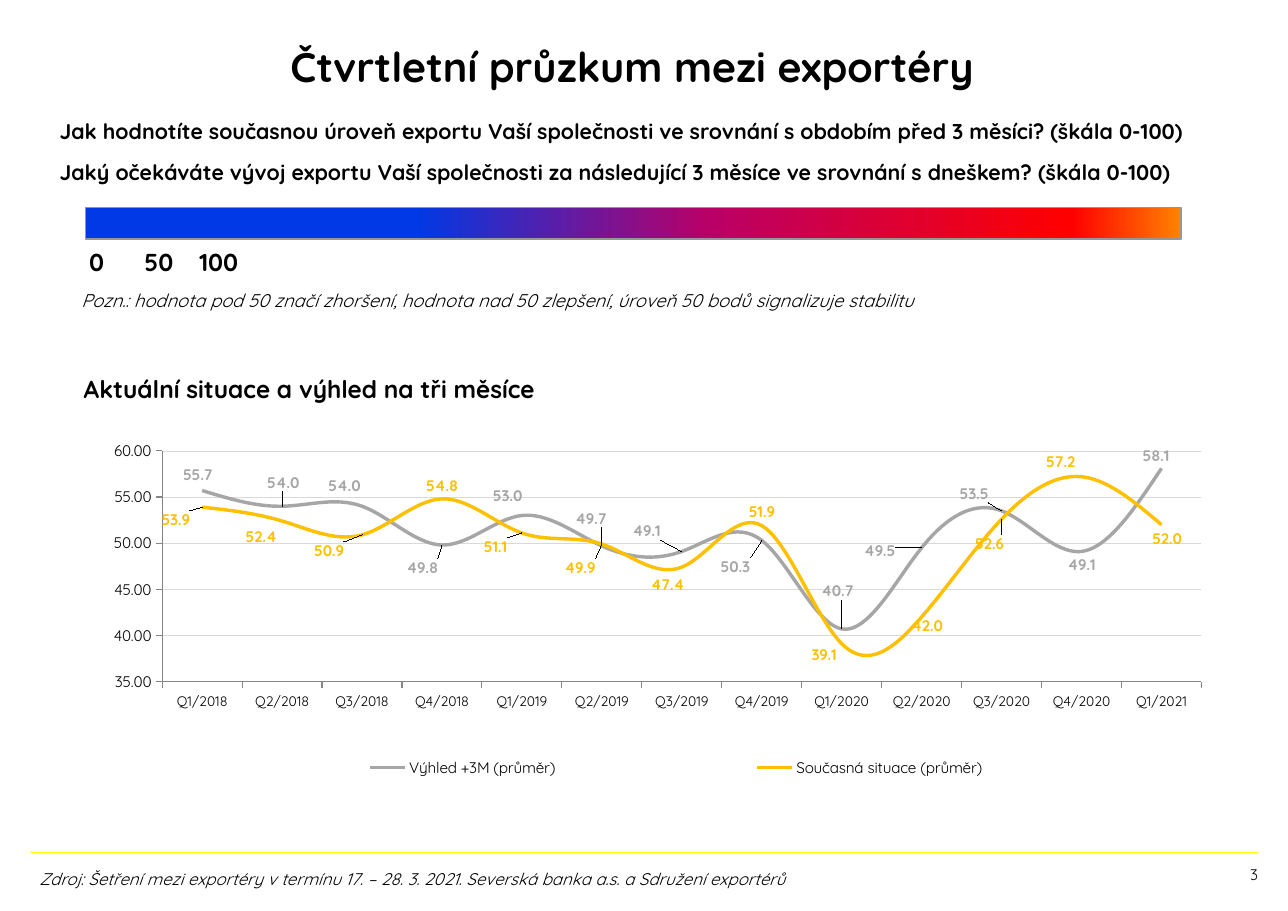
from lxml.etree import SubElement
from pptx import Presentation
from pptx.chart.data import CategoryChartData
from pptx.dml.color import RGBColor
from pptx.enum.chart import XL_CHART_TYPE, XL_LABEL_POSITION, XL_LEGEND_POSITION, XL_MARKER_STYLE, XL_TICK_MARK
from pptx.enum.shapes import MSO_CONNECTOR, MSO_SHAPE
from pptx.enum.text import MSO_ANCHOR, MSO_AUTO_SIZE, PP_ALIGN
from pptx.oxml.ns import qn
from pptx.util import Pt

EMU_PER_PX = 9144
CHART_WIDTH, CHART_HEIGHT = 1004, 355
INSETS = (12, 16, 12, 0)

QUARTERS = [f"Q{quarter}/{year}" for year in (2018, 2019, 2020) for quarter in (1, 2, 3, 4)] + ["Q1/2021"]
# Label shifts are (right, down) in px from the usual place, by point number.
SERIES = [
    dict(name="Výhled +3M (průměr)", color="A6A6A6", place=XL_LABEL_POSITION.BELOW,
         values=(55.7, 54, 54, 49.8, 53, 49.7, 49.1, 50.3, 40.7, 49.5, 53.5, 49.1, 58.1),
         shifts={0: (-4, -27), 1: (1, -34), 2: (-16, -31), 3: (-18, 8), 4: (-13, -30), 5: (-10, -37),
                 6: (-32, -31), 7: (-24, 12), 8: (-4, -47), 9: (-38, -10), 10: (-25, -28), 12: (-5, -24)}),
    dict(name="Současná situace (průměr)", color="FFC000", place=XL_LABEL_POSITION.ABOVE,
         values=(53.9, 52.4, 50.9, 54.8, 51.1, 49.9, 47.4, 51.9, 39.1, 42, 52.6, 57.2, 52),
         shifts={0: (-24, 24), 1: (-19, 27), 2: (-30, 27), 4: (-24, 25), 5: (-20, 34), 6: (-13, 28),
                 8: (-16, 22), 9: (5, 20), 10: (-11, 35), 11: (-19, -1), 12: (5, 25)}),
]


def px(length):
    return length * EMU_PER_PX


def rgb(color):
    return RGBColor.from_string(color)


def add_layout(parent, index, **settings):
    """Insert a manual chart layout as the child of parent at index."""
    layout = parent.makeelement(qn("c:layout"))
    manual = SubElement(layout, qn("c:manualLayout"))
    for name, value in settings.items():
        SubElement(manual, qn(f"c:{name}"), val=str(value))
    parent.insert(index, layout)


class SlideBuilder:
    font_name = "Quicksand"
    text_color = "000000"

    def __init__(self, page):
        self.page = page

    def style_font(self, font, size, color=None, bold=False, italic=False):
        font.name, font.size, font.bold, font.italic = self.font_name, Pt(size), bold, italic
        font.color.rgb = rgb(color or self.text_color)

    def fill_text(self, box, at, lines, size, insets=(10, 5, 10, 5), align=PP_ALIGN.LEFT,
                  anchor=MSO_ANCHOR.TOP, tabs=(), **style):
        box.left, box.top, box.width, box.height = map(px, at)
        frame = box.text_frame
        frame.auto_size, frame.word_wrap, frame.vertical_anchor = MSO_AUTO_SIZE.NONE, True, anchor
        frame.margin_left, frame.margin_top, frame.margin_right, frame.margin_bottom = map(px, insets)
        for number, line in enumerate(lines):
            para = frame.add_paragraph() if number else frame.paragraphs[0]
            para.alignment, para.space_before = align, Pt(10 if number else 0)
            properties = para._p.get_or_add_pPr()
            properties.set("marL", "0")
            properties.set("indent", "0")
            SubElement(properties, qn("a:buNone"))
            if tabs:
                stops = SubElement(properties, qn("a:tabLst"))
                for position, kind in tabs:
                    SubElement(stops, qn("a:tab"), pos=str(px(position)), algn=kind)
            span = para.add_run()
            span.text = line
            self.style_font(span.font, size, **style)

    def text(self, at, line, size, **style):
        box = self.page.shapes.add_textbox(*map(px, at))
        self.fill_text(box, at, [line], size, **style)

    def gradient_bar(self, at, stops, line_color):
        bar = self.page.shapes.add_shape(MSO_SHAPE.RECTANGLE, *map(px, at))
        bar.shadow.inherit = False
        bar.fill.gradient()
        bar.fill.gradient_angle = 0
        stop_list = bar._element.spPr.find(".//" + qn("a:gsLst"))
        for old_stop in list(stop_list):
            stop_list.remove(old_stop)
        for percent, color in stops:
            stop = SubElement(stop_list, qn("a:gs"), pos=str(percent * 1000))
            SubElement(stop, qn("a:srgbClr"), val=color)
        bar.line.color.rgb, bar.line.width = rgb(line_color), Pt(0.75)

    def rule(self, left, right, top, color):
        rule = self.page.shapes.add_connector(MSO_CONNECTOR.STRAIGHT, px(left), px(top), px(right), px(top))
        rule.line.color.rgb, rule.line.width = rgb(color), Pt(1)
        SubElement(rule._element.spPr, qn("a:effectLst"))

    def line_chart(self, at):
        data = CategoryChartData()
        data.categories = QUARTERS
        for entry in SERIES:
            data.add_series(entry["name"], entry["values"])
        chart = self.page.shapes.add_chart(XL_CHART_TYPE.LINE, *map(px, at), data).chart
        chart.has_title = False
        self.style_font(chart.font, 10)
        plot = chart.plots[0]
        plot.vary_by_categories = False
        for series, entry in zip(plot.series, SERIES):
            self.style_series(series, entry)
        self.style_axes(chart)
        chart.has_legend = True
        legend = chart.legend
        legend.position, legend.include_in_layout = XL_LEGEND_POSITION.BOTTOM, False
        self.style_font(legend.font, 10)
        for old_layout in legend._element.findall(qn("c:layout")):
            legend._element.remove(old_layout)
        add_layout(legend._element, 1, xMode="edge", yMode="edge", x=0.07, y=0.85, w=0.91, h=0.08)
        plot_area = plot._element.getparent()
        for old_layout in plot_area.findall(qn("c:layout")):
            plot_area.remove(old_layout)
        add_layout(plot_area, 0, layoutTarget="inner", xMode="edge", yMode="edge", x=0.06, y=0.08, w=0.94, h=0.59)

    def style_series(self, series, entry):
        color = entry["color"]
        series.smooth = True
        series.marker.style = XL_MARKER_STYLE.NONE
        series.format.line.color.rgb, series.format.line.width = rgb(color), Pt(2.25)
        labels = series.data_labels
        labels.show_value, labels.position = True, entry["place"]
        labels.number_format, labels.number_format_is_linked = "#,##0.0", False
        self.style_font(labels.font, 10, color, bold=True)
        for number in entry["shifts"]:
            label = series.points[number].data_label
            self.style_font(label.font, 10, color, bold=True)
            label.position = entry["place"]
        point_labels = labels._element.findall(qn("c:dLbl"))
        for element, (right, down) in zip(point_labels, entry["shifts"].values()):
            add_layout(element, 1, x=right / CHART_WIDTH, y=down / CHART_HEIGHT)
            number_format = element.makeelement(qn("c:numFmt"), formatCode="#,##0.0", sourceLinked="0")
            element.insert(2, number_format)

    def style_axes(self, chart):
        for axis, size in ((chart.category_axis, 9), (chart.value_axis, 10)):
            axis.major_tick_mark, axis.minor_tick_mark = XL_TICK_MARK.OUTSIDE, XL_TICK_MARK.NONE
            axis.format.line.color.rgb, axis.format.line.width = rgb("868686"), Pt(0.75)
            self.style_font(axis.tick_labels.font, size)
        values = chart.value_axis
        values.minimum_scale, values.maximum_scale, values.major_unit = 35, 60, 5
        values.tick_labels.number_format, values.tick_labels.number_format_is_linked = "#,##0.00", False
        grid = values.major_gridlines.format.line
        grid.color.rgb, grid.width = rgb("D9D9D9"), Pt(0.5)


def main():
    deck = Presentation()
    deck.slide_width, deck.slide_height = px(1169), px(827)
    page = deck.slides.add_slide(deck.slide_layouts[1])
    slide = SlideBuilder(page)
    slide.rule(28, 1142, 774, "FFFF00")
    slide.fill_text(page.shapes.title, (64, 18, 1019, 83), ["Čtvrtletní průzkum mezi exportéry"], 27,
                    insets=(0, 0, 0, 0), align=PP_ALIGN.CENTER, anchor=MSO_ANCHOR.MIDDLE, bold=True)
    questions = [
        "Jak hodnotíte současnou úroveň exportu Vaší společnosti ve srovnání s obdobím před 3 měsíci? (škála 0-100)",
        "Jaký očekáváte vývoj exportu Vaší společnosti za následující 3 měsíce ve srovnání s dneškem? (škála 0-100)",
    ]
    slide.fill_text(page.placeholders[1], (42, 91, 1086, 147), questions, 14, insets=INSETS, bold=True)
    slide.text((69, 208, 1073, 50), "0\t50\t100", 16, insets=INSETS, tabs=((491, "ctr"), (992, "r")), bold=True)
    slide.gradient_bar((78, 188, 994, 29), ((30, "0039E5"), (57, "BA0066"), (90, "FF0000"), (100, "FF8200")), "969696")
    slide.text((64, 258, 1084, 30), "Pozn.: hodnota pod 50 značí zhoršení, hodnota nad 50 zlepšení, "
               "úroveň 50 bodů signalizuje stabilitu", 12, italic=True)
    slide.text((64, 324, 853, 55), "Aktuální situace a výhled na tři měsíce", 16, insets=INSETS, bold=True)
    slide.line_chart((87, 381, CHART_WIDTH, CHART_HEIGHT))
    slide.text((26, 784, 994, 29), "Zdroj: Šetření mezi exportéry v termínu 17. – 28. 3. 2021. "
               "Severská banka a.s. a Sdružení exportérů", 11, italic=True)
    slide.text((676, 785, 466, 42), "3", 10, insets=(0, 0, 0, 0), align=PP_ALIGN.RIGHT)
    deck.save("out.pptx")


if __name__ == "__main__":
    main()
